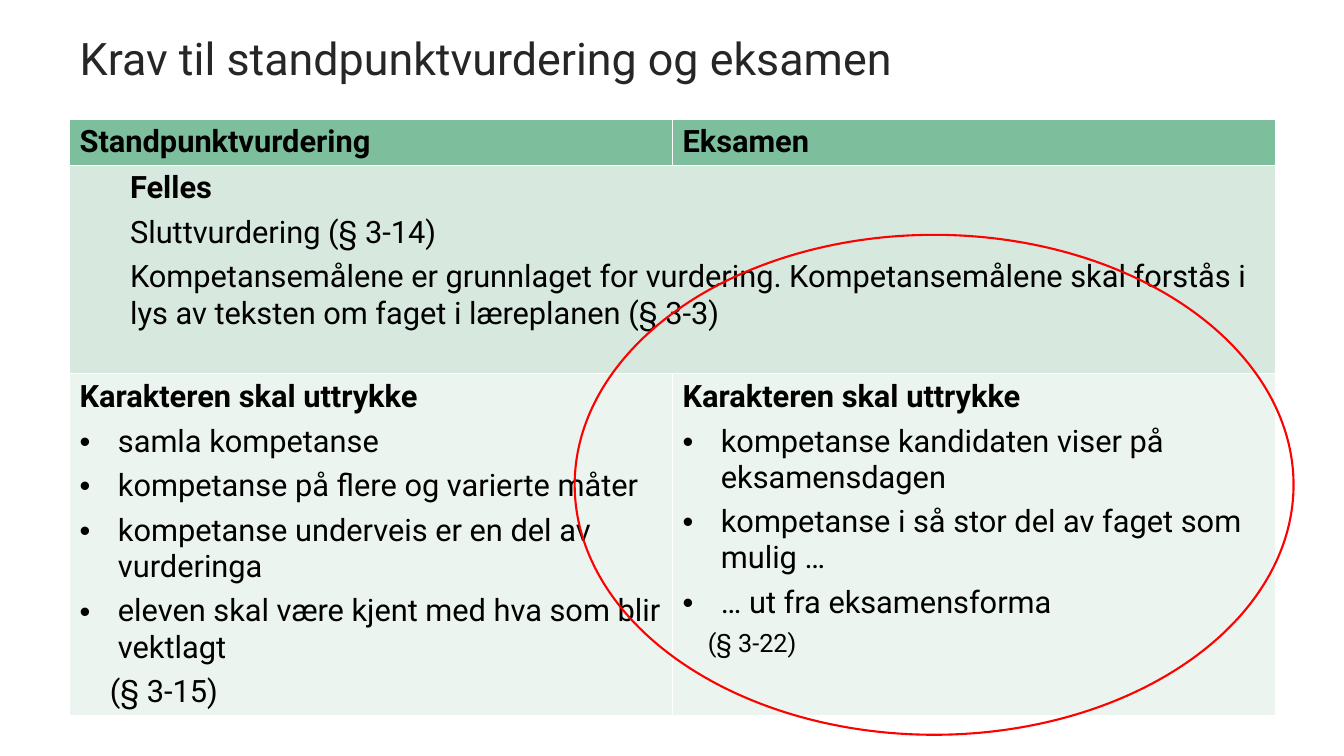
"""Build a slide comparing the demands on final grading and exams."""
import pptx
import pptx.dml.color
import pptx.enum.shapes
import pptx.enum.text
import pptx.oxml.ns
import pptx.util
from lxml import etree

Inches, Pt = pptx.util.Inches, pptx.util.Pt
RGB = pptx.dml.color.RGBColor.from_string
THEME = {
    "font": "Roboto", "title": 32, "body": 22, "note": 18,
    "dark": "262626", "text": "000000", "ring": "FF0000",
    "rows": ["7DBF9D", "D7E8DF", "ECF4EF"],
}


def style(para, size, color, bold=False):
    """Set the font of a whole paragraph."""
    font = para.font
    font.name, font.size, font.bold = THEME["font"], Pt(size), bold
    font.color.rgb = RGB(color)


def fill_cell(cell, lines):
    """Write (text, kind, indent, size) lines into a table cell."""
    frame = cell.text_frame
    for i, (text, kind, indent, size) in enumerate(lines):
        para = frame.add_paragraph() if i else frame.paragraphs[0]
        para.text = text
        if i:
            para.space_before = Pt(6)
        props = para._p.get_or_add_pPr()
        props.set("marL", str(Inches(indent)))
        props.set("indent", str(Inches(-indent if kind == "bullet" else 0)))
        if kind == "bullet":
            for tag, key, value in (("a:buFont", "typeface", "Arial"),
                                    ("a:buChar", "char", "•")):
                etree.SubElement(props, pptx.oxml.ns.qn(tag)).set(key, value)
        style(para, THEME[size], THEME["text"], kind == "head")


deck = pptx.Presentation()
deck.slide_width, deck.slide_height = Inches(13.33), Inches(7.5)
slide = deck.slides.add_slide(deck.slide_layouts[5])

title = slide.shapes.title
title.left, title.top = Inches(0.69), Inches(0.36)
title.width, title.height = Inches(11.96), Inches(1.14)
frame = title.text_frame
frame.text = "Krav til standpunktvurdering og eksamen"
frame.word_wrap = True
frame.auto_size = pptx.enum.text.MSO_AUTO_SIZE.NONE
frame.vertical_anchor = pptx.enum.text.MSO_ANCHOR.TOP
frame.margin_top = 0
para = frame.paragraphs[0]
para.alignment = pptx.enum.text.PP_ALIGN.LEFT
para.line_spacing = 0.9
style(para, THEME["title"], THEME["dark"])

heights = [0.45, 2.07, 3.38]
table = slide.shapes.add_table(
    3, 2, Inches(0.69), Inches(1.18), Inches(11.96), Inches(sum(heights))).table
for col in table.columns:
    col.width = Inches(5.98)
for row, height, color in zip(table.rows, heights, THEME["rows"]):
    row.height = Inches(height)
    for cell in row.cells:
        cell.fill.solid()
        cell.fill.fore_color.rgb = RGB(color)
table.cell(1, 0).merge(table.cell(1, 1))

for col, name in enumerate(["Standpunktvurdering", "Eksamen"]):
    fill_cell(table.cell(0, col), [(name, "head", 0, "body")])

fill_cell(table.cell(1, 0), [
    ("Felles", "head", 0.5, "body"),
    ("Sluttvurdering (§ 3-14)", "plain", 0.5, "body"),
    ("Kompetansemålene er grunnlaget for vurdering. Kompetansemålene skal "
     "forstås i lys av teksten om faget i læreplanen (§ 3-3)",
     "plain", 0.5, "body"),
])

grades = [
    (["samla kompetanse",
      "kompetanse på flere og varierte måter",
      "kompetanse underveis er en del av vurderinga",
      "eleven skal være kjent med hva som blir vektlagt"],
     ("(§ 3-15)", "plain", 0.3, "body")),
    (["kompetanse kandidaten viser på eksamensdagen",
      "kompetanse i så stor del av faget som mulig …",
      "… ut fra eksamensforma"],
     ("(§ 3-22)", "plain", 0.25, "note")),
]
for col, (points, law) in enumerate(grades):
    fill_cell(table.cell(2, col), [
        ("Karakteren skal uttrykke", "head", 0, "body"),
        *[(point, "bullet", 0.38, "body") for point in points],
        law,
    ])

ring = slide.shapes.add_shape(
    pptx.enum.shapes.MSO_SHAPE.OVAL,
    Inches(5.7), Inches(2.33), Inches(7.13), Inches(4.96))
ring.shadow.inherit = False
ring.fill.background()
ring.line.color.rgb = RGB(THEME["ring"])
ring.line.width = Pt(1.5)

deck.save("out.pptx")
